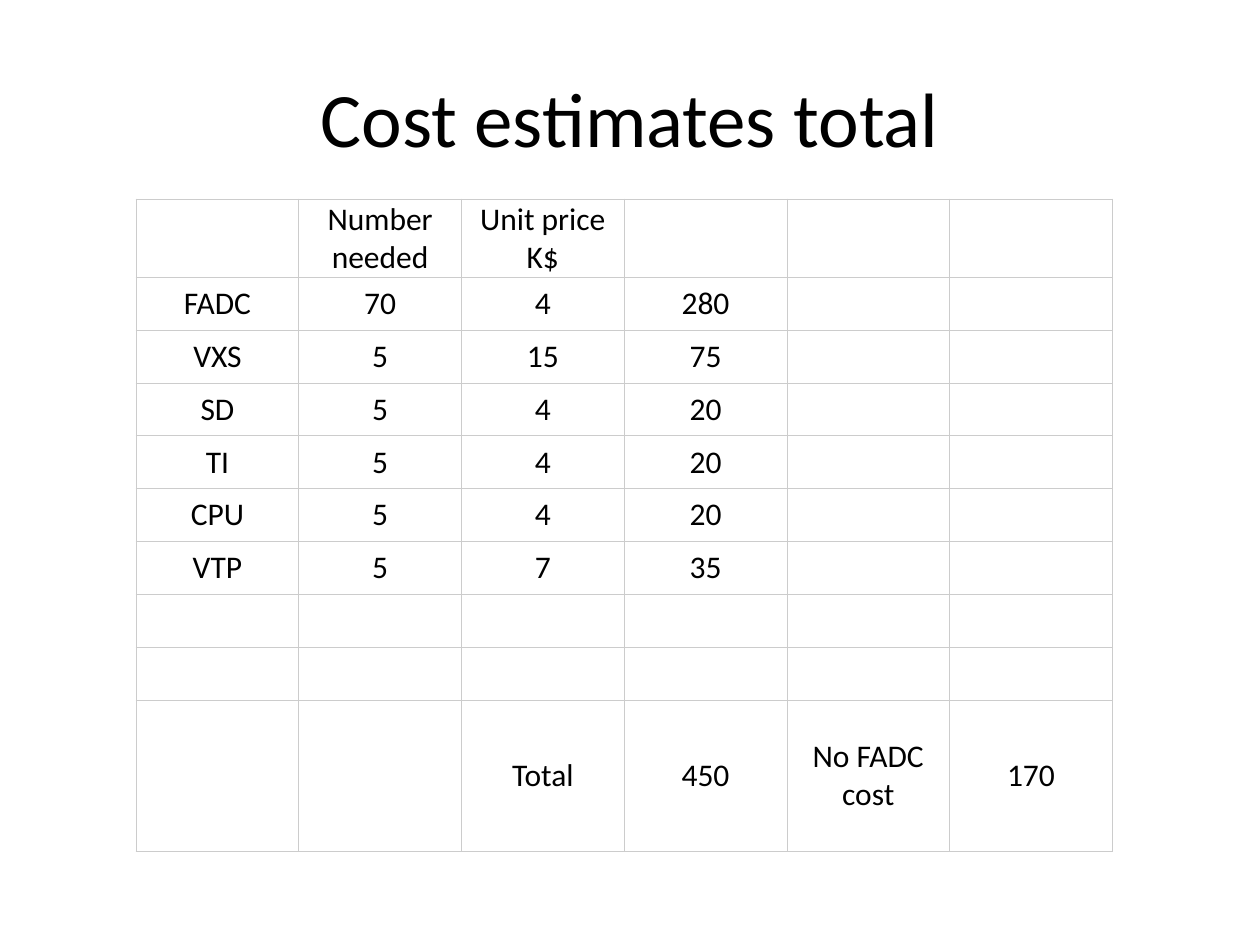
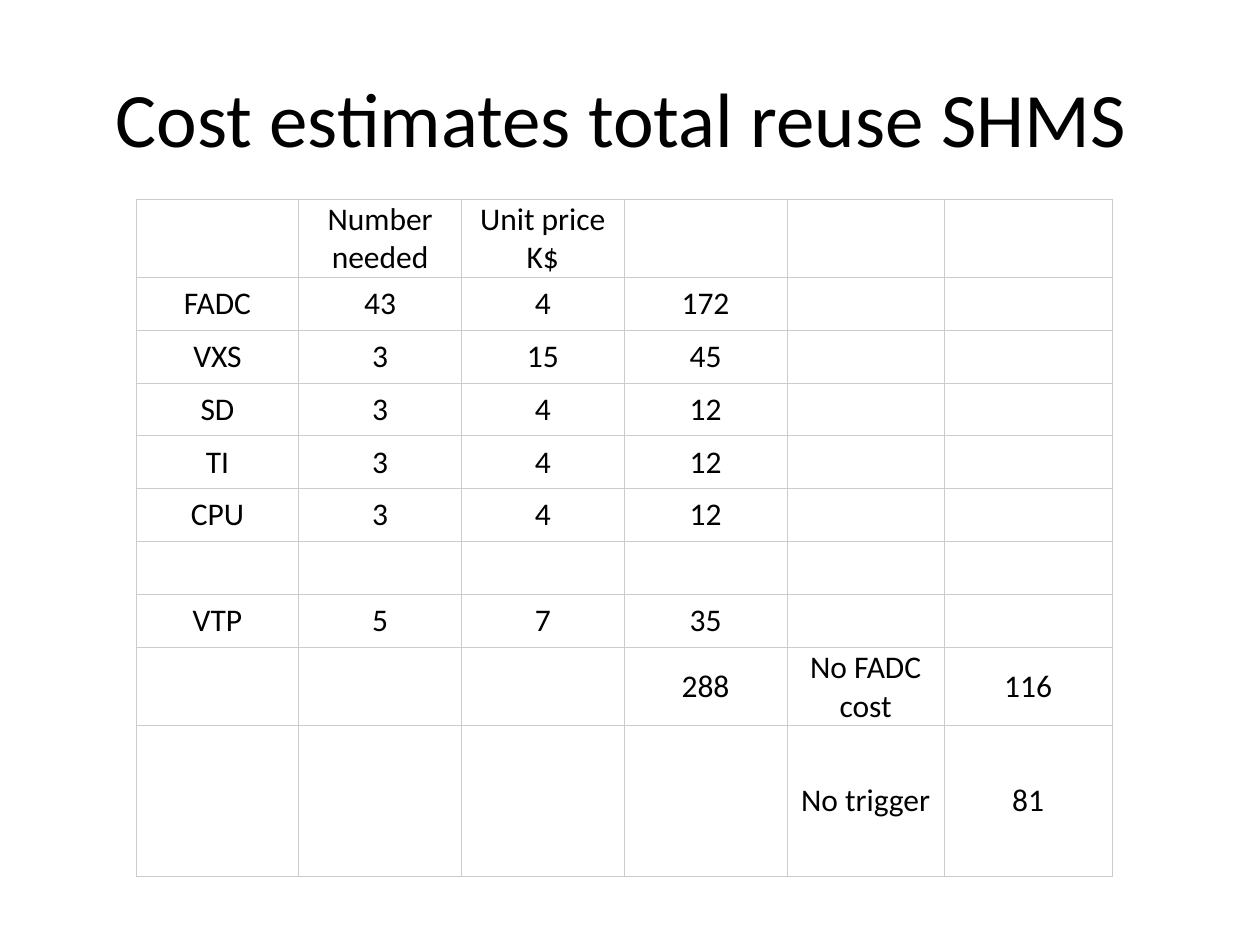
from dataclasses import dataclass

from lxml.etree import SubElement
from pptx import Presentation
from pptx.dml.color import RGBColor
from pptx.enum.text import MSO_ANCHOR as Anchor, PP_ALIGN as Align
from pptx.oxml.ns import qn
from pptx.slide import Slide
from pptx.table import _Cell as Cell
from pptx.text.text import TextFrame
from pptx.util import Inches, Pt

FONT = "Calibri"
TEXT_COLOR = "000000"
BORDER_COLOR = "CCCCCC"
BACKGROUND_COLOR = "FFFFFF"
TITLE_SIZE = Pt(44)
CELL_SIZE = Pt(18)
BORDER_WIDTH = Pt(0.5)
ROW_HEIGHT = Inches(0.42)
LAST_ROW_HEIGHT = Inches(1.2)
TABLE_LEFT, TABLE_TOP = Inches(1.08), Inches(1.58)
EVEN_WIDTH = 7.75 / 6
HEADER = ("", "Number needed", "Unit price K$")
CELL_FORMAT = {
    "margin_left": Inches(0.02),
    "margin_right": Inches(0.02),
    "margin_top": Inches(0.01),
    "margin_bottom": Inches(0.01),
    "vertical_anchor": Anchor.MIDDLE,
}


@dataclass(frozen=True)
class Item:
    name: str
    number: int
    unit_price: int

    def row(self) -> tuple[str, ...]:
        cost = self.number * self.unit_price
        return self.name, str(self.number), str(self.unit_price), str(cost)


@dataclass(frozen=True)
class CostEstimate:
    title: str
    column_widths: tuple[float, ...]
    rows: tuple[tuple[str, ...], ...]


ESTIMATES = (
    CostEstimate(
        "Cost estimates total",
        (EVEN_WIDTH,) * 6,
        (
            HEADER,
            Item("FADC", 70, 4).row(),
            Item("VXS", 5, 15).row(),
            Item("SD", 5, 4).row(),
            Item("TI", 5, 4).row(),
            Item("CPU", 5, 4).row(),
            Item("VTP", 5, 7).row(),
            (),
            (),
            ("", "", "Total", "450", "No FADC cost", "170"),
        ),
    ),
    CostEstimate(
        "Cost estimates total reuse SHMS ",
        (EVEN_WIDTH,) * 4 + (1.25, 1.33),
        (
            HEADER,
            Item("FADC", 43, 4).row(),
            Item("VXS", 3, 15).row(),
            Item("SD", 3, 4).row(),
            Item("TI", 3, 4).row(),
            Item("CPU", 3, 4).row(),
            (),
            Item("VTP", 5, 7).row(),
            ("", "", "", "288", "No FADC cost", "116"),
            ("", "", "", "", "No trigger", "81"),
        ),
    ),
)


def color(value: str) -> RGBColor:
    return RGBColor.from_string(value)


def write_text(frame: TextFrame, text: str, size: Pt) -> None:
    paragraph = frame.paragraphs[0]
    paragraph.alignment = Align.CENTER
    if text:
        paragraph.add_run().text = text
    for font in (paragraph.font, *(run.font for run in paragraph.runs)):
        for name, value in {"name": FONT, "size": size}.items():
            setattr(font, name, value)
        font.color.rgb = color(TEXT_COLOR)


def draw_title(slide: Slide, text: str) -> None:
    frame = slide.shapes.add_textbox(
        Inches(0.5), Inches(0.3), Inches(9), Inches(1.25)
    ).text_frame
    for name, value in {"word_wrap": True, "vertical_anchor": Anchor.MIDDLE}.items():
        setattr(frame, name, value)
    write_text(frame, text, TITLE_SIZE)


def draw_borders(cell: Cell) -> None:
    properties = cell._tc.get_or_add_tcPr()
    for side in ("a:lnL", "a:lnR", "a:lnT", "a:lnB"):
        line = SubElement(properties, qn(side), w=str(BORDER_WIDTH))
        fill = SubElement(line, qn("a:solidFill"))
        SubElement(fill, qn("a:srgbClr"), val=BORDER_COLOR)


def draw_cell(cell: Cell, text: str) -> None:
    for name, value in CELL_FORMAT.items():
        setattr(cell, name, value)
    draw_borders(cell)
    cell.fill.background()
    write_text(cell.text_frame, text, CELL_SIZE)


def draw_table(slide: Slide, estimate: CostEstimate) -> None:
    widths = [Inches(width) for width in estimate.column_widths]
    heights = [ROW_HEIGHT] * (len(estimate.rows) - 1) + [LAST_ROW_HEIGHT]
    table = slide.shapes.add_table(
        len(heights), len(widths), TABLE_LEFT, TABLE_TOP, sum(widths), sum(heights)
    ).table
    for name in ("first_row", "horz_banding"):
        setattr(table, name, False)
    for column, width in zip(table.columns, widths):
        column.width = width
    for row, height, texts in zip(table.rows, heights, estimate.rows):
        row.height = height
        padded = texts + ("",) * (len(widths) - len(texts))
        for cell, text in zip(row.cells, padded):
            draw_cell(cell, text)


def main() -> None:
    presentation = Presentation()
    presentation.slide_width = Inches(10)
    presentation.slide_height = Inches(7.5)
    for estimate in ESTIMATES:
        slide = presentation.slides.add_slide(presentation.slide_layouts[6])
        slide.background.fill.solid()
        slide.background.fill.fore_color.rgb = color(BACKGROUND_COLOR)
        draw_title(slide, estimate.title)
        draw_table(slide, estimate)
    presentation.save("out.pptx")


if __name__ == "__main__":
    main()
